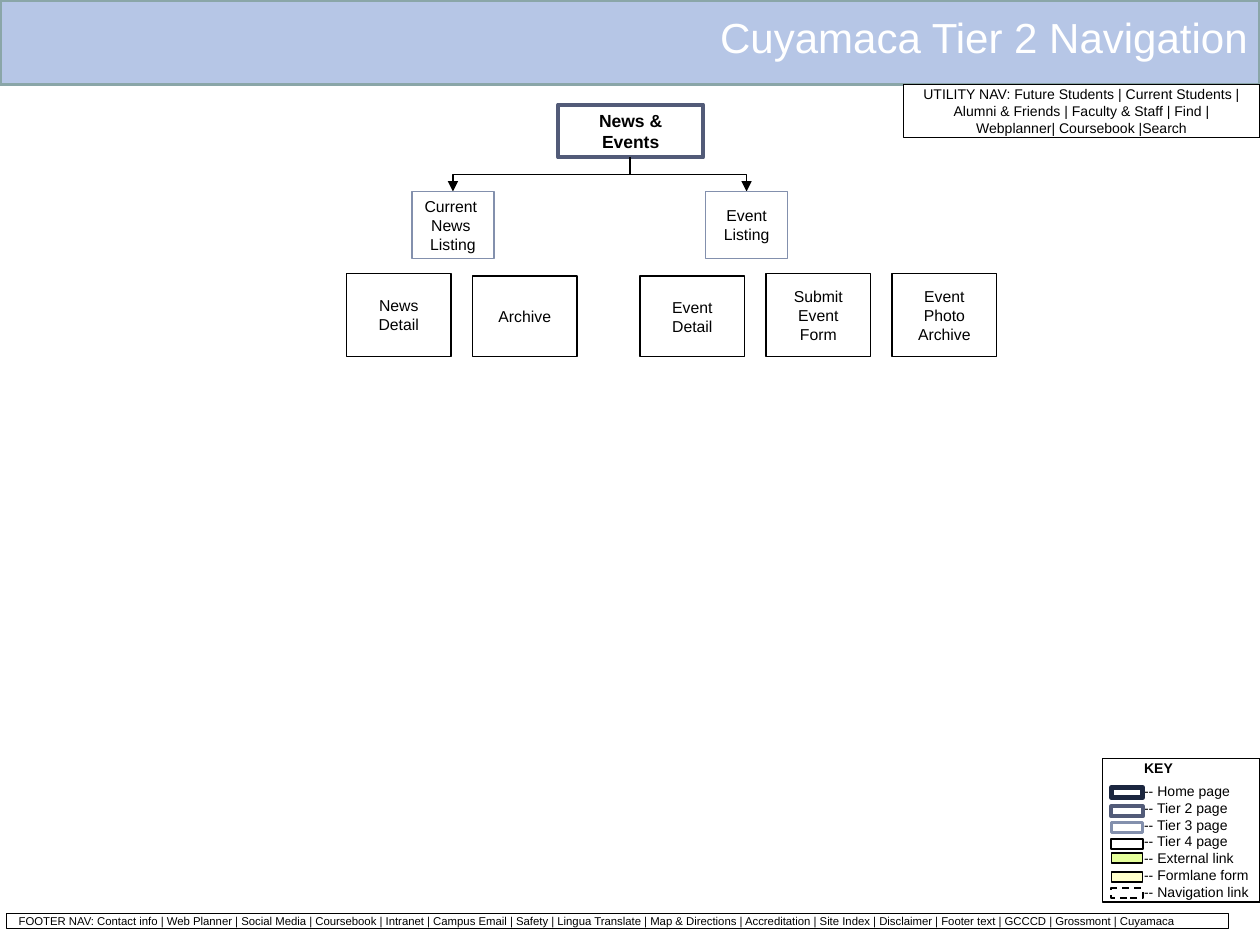
from dataclasses import dataclass

from lxml import etree
from pptx import Presentation
from pptx.dml.color import RGBColor
from pptx.enum.dml import MSO_LINE
from pptx.enum.shapes import MSO_CONNECTOR, MSO_SHAPE
from pptx.enum.text import MSO_ANCHOR, PP_ALIGN
from pptx.oxml.ns import qn
from pptx.util import Inches, Pt

RECTANGLE = MSO_SHAPE.RECTANGLE
ELBOW = MSO_CONNECTOR.ELBOW
DASH = MSO_LINE.DASH
MIDDLE, TOP = MSO_ANCHOR.MIDDLE, MSO_ANCHOR.TOP
LEFT, CENTER, RIGHT = PP_ALIGN.LEFT, PP_ALIGN.CENTER, PP_ALIGN.RIGHT


@dataclass(frozen=True)
class Theme:
    font: str = "Arial"
    white: str = "FFFFFF"
    black: str = "000000"
    banner: str = "B6C6E6"
    banner_edge: str = "8AA6A8"
    home: str = "1B263F"
    tier_two: str = "525B78"
    tier_three: str = "8390AD"
    external: str = "E5FF9B"
    form: str = "FFFFCC"
    title_size: float = 24
    heading_size: float = 10
    node_size: float = 9
    note_size: float = 8
    footer_size: float = 6.5


class SlideBuilder:
    def __init__(self, page, theme):
        self.page = page
        self.theme = theme

    def rectangle(self, at, fill, edge, weight, dash=None):
        box = self.page.shapes.add_shape(RECTANGLE, *map(Inches, at))
        box.shadow.inherit = False
        if fill:
            box.fill.solid()
            box.fill.fore_color.rgb = RGBColor.from_string(fill)
        else:
            box.fill.background()
        box.line.color.rgb = RGBColor.from_string(edge)
        box.line.width = Pt(weight)
        if dash:
            box.line.dash_style = dash
        return box

    def text_box(self, at):
        return self.page.shapes.add_textbox(*map(Inches, at))

    def frame(self, box, anchor=MIDDLE, inset=None):
        values = {"word_wrap": True, "vertical_anchor": anchor}
        if inset is not None:
            for side in ("left", "top", "right", "bottom"):
                values[f"margin_{side}"] = Inches(inset)
        for name, value in values.items():
            setattr(box.text_frame, name, value)

    def add_text(self, para, lines, size, align=CENTER, color=None, bold=False):
        para.alignment = align
        values = {"name": self.theme.font, "size": Pt(size), "bold": bold}
        for index, line in enumerate(lines):
            if index:
                para.add_line_break()
            span = para.add_run()
            span.text = line
            for name, value in values.items():
                setattr(span.font, name, value)
            span.font.color.rgb = RGBColor.from_string(color or self.theme.black)

    def node(self, at, paragraphs, size, edge, weight, align=CENTER, bold=False, inset=None):
        box = self.rectangle(at, self.theme.white, edge, weight)
        self.frame(box, inset=inset)
        for index, text in enumerate(paragraphs):
            para = box.text_frame.add_paragraph() if index else box.text_frame.paragraphs[0]
            self.add_text(para, [text], size, align, bold=bold)

    def branch(self, start, end):
        (x1, y1), (x2, y2) = start, end
        drop, run = y2 - y1, abs(x2 - x1)
        left, top = (x1 + x2 - drop) / 2, (y1 + y2 - run) / 2
        corners = (left, top, left + drop, top + run)
        arrow = self.page.shapes.add_connector(ELBOW, *map(Inches, corners))
        arrow.line.color.rgb = RGBColor.from_string(self.theme.black)
        arrow.line.width = Pt(0.75)
        properties = arrow._element.spPr
        turn = properties.find(qn("a:xfrm"))
        turn.set("rot", "16200000" if x2 > x1 else "5400000")
        if x2 > x1:
            turn.set("flipH", "1")
        etree.SubElement(properties.find(qn("a:ln")), qn("a:tailEnd"), type="triangle")
        etree.SubElement(properties, qn("a:effectLst"))


def add_header_and_footer(builder):
    theme = builder.theme
    builder.rectangle((0, 0, 10, 0.67), theme.banner, theme.banner_edge, 2)
    title = builder.text_box((4.25, 0, 5.75, 0.58))
    builder.frame(title)
    builder.add_text(title.text_frame.paragraphs[0], ["Cuyamaca Tier 2 Navigation"],
                     theme.title_size, RIGHT, theme.white)
    utility = ("UTILITY NAV: Future Students | Current Students | Alumni & Friends | "
               "Faculty & Staff | Find | Webplanner| Coursebook |Search")
    builder.node((7.17, 0.67, 2.83, 0.42), [utility], theme.note_size, theme.black, 0.75)
    footer = ("FOOTER NAV: Contact info | Web Planner | Social Media | Coursebook | Intranet | "
              "Campus Email | Safety | Lingua Translate | Map & Directions | Accreditation | "
              "Site Index | Disclaimer | Footer text | GCCCD | Grossmont | Cuyamaca")
    builder.node((0.05, 7.25, 9.7, 0.12), [footer], theme.footer_size, theme.black, 0.75, LEFT)


def add_key(builder):
    theme = builder.theme
    entries = [
        ("Home page", 6.25, theme.white, theme.home, 3, None),
        ("Tier 2 page", 6.4, theme.white, theme.tier_two, 2.25, None),
        ("Tier 3 page", 6.53, theme.white, theme.tier_three, 1.5, None),
        ("Tier 4 page", 6.66, theme.white, theme.black, 1, None),
        ("External link", 6.77, theme.external, theme.black, 0.75, None),
        ("Formlane form", 6.92, theme.form, theme.black, 0.75, None),
        ("Navigation link", 7.05, theme.white, theme.black, 1, DASH),
    ]
    labels = builder.text_box((9.08, 6.03, 0.92, 1.13))
    builder.frame(labels, TOP, 0)
    heading = labels.text_frame.paragraphs[0]
    heading.space_after = Pt(3.5)
    builder.add_text(heading, ["KEY"], theme.note_size, LEFT, bold=True)
    builder.add_text(labels.text_frame.add_paragraph(), [f"-- {entry[0]}" for entry in entries],
                     theme.note_size, LEFT)
    builder.rectangle((8.75, 6.02, 1.25, 1.14), None, theme.black, 0.75)
    for _, top, *style in entries:
        builder.rectangle((8.82, top, 0.25, 0.08), *style)


def add_site_tree(builder):
    theme = builder.theme
    builder.node((4.43, 0.83, 1.15, 0.42), ["News & Events"], theme.heading_size,
                 theme.tier_two, 2.25, bold=True)
    listings = [(3.27, ["Current ", "News ", "Listing"]), (5.6, ["Event", "Listing"])]
    width, top = 0.65, 1.52
    for left, words in listings:
        builder.branch((5, 1.25), (left + width / 2, top))
        builder.node((left, top, width, 0.53), words, theme.node_size,
                     theme.tier_three, 0.75, inset=0)
    bottom = 2.83
    groups = [
        (2.75, [("News Detail", 2.17), ("Archive", 2.19)]),
        (5.08, [("Event Detail", 2.19), ("Submit Event Form", 2.17),
                ("Event Photo Archive", 2.17)]),
    ]
    for left, pages in groups:
        for index, (label, top) in enumerate(pages):
            builder.node((left + index, top, 0.83, bottom - top), [label],
                         theme.node_size, theme.black, 1)


def main():
    deck = Presentation()
    deck.slide_width, deck.slide_height = Inches(10), Inches(7.5)
    page = deck.slides.add_slide(deck.slide_layouts[6])
    builder = SlideBuilder(page, Theme())
    add_header_and_footer(builder)
    add_key(builder)
    add_site_tree(builder)
    deck.save("out.pptx")


if __name__ == "__main__":
    main()
